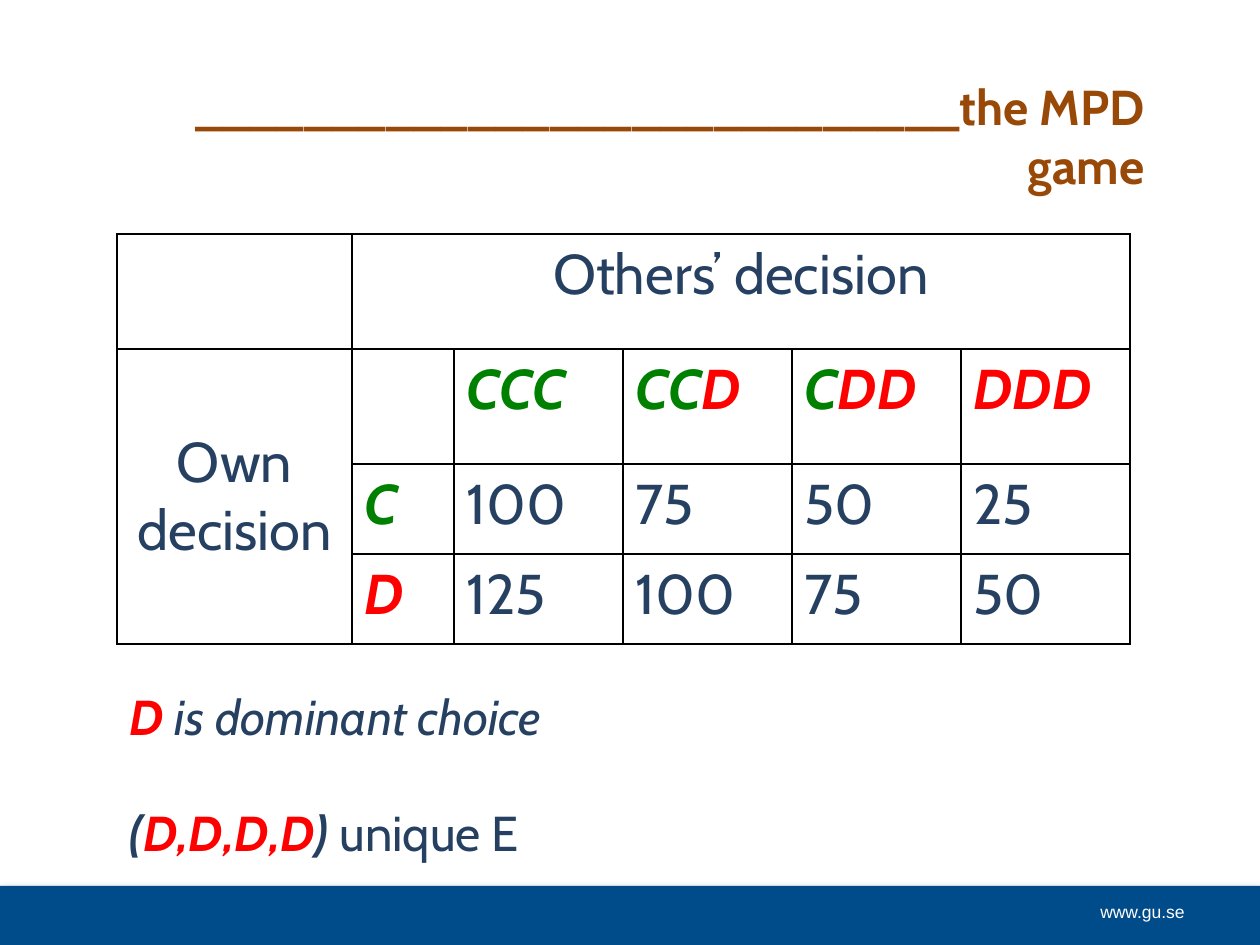
"""Build the slide with the payoff table of the MPD game."""
from itertools import groupby

from lxml.etree import SubElement
from pptx import Presentation
from pptx.dml.color import RGBColor
from pptx.enum.shapes import MSO_SHAPE
from pptx.enum.text import MSO_ANCHOR, MSO_AUTO_SIZE, PP_ALIGN
from pptx.oxml import parse_xml
from pptx.oxml.ns import nsdecls, qn
from pptx.util import Pt

PX = 914400 // 126
NAVY, RED, GREEN, BROWN = "254061", "FF0000", "008000", "984807"
BLUE, WHITE, BLACK = "004B89", "FFFFFF", "000000"
CHOICE_COLORS = {"C": GREEN, "D": RED}

TITLE = "_" * 28 + "the MPD game"
OTHERS_HEADING = "Others’ decision"
OWN_HEADING = "Own decision"
PAYOFFS = [
    ["", "CCC", "CCD", "CDD", "DDD"],
    ["C", "100", "75", "50", "25"],
    ["D", "125", "100", "75", "50"],
]
CONCLUSIONS = [
    [("D ", RED, True, True), ("is dominant choice", NAVY, False, True)],
    [("(", NAVY, True, True), ("D,D,D,D", RED, True, True),
     (")", NAVY, True, True), (" unique E", NAVY, False, False)],
]
ADDRESS = "www.gu.se"

COLUMN_WIDTHS = [235, 102] + [169] * 4
ROW_HEIGHTS = [115, 115, 90, 90]
TABLE_LEFT, TABLE_TOP = 117, 234


def box(*lengths):
    return [length * PX for length in lengths]


def rgb(color):
    return RGBColor.from_string(color)


def style(font, size, name="Cabin", color=None, bold=None):
    font.size, font.name = Pt(size), name
    if color:
        font.color.rgb = rgb(color)
    font.bold = bold


def add_runs(paragraph, runs, size):
    style(paragraph.font, size)
    for text, color, bold, italic in runs:
        run = paragraph.add_run()
        run.text = text
        run.font.color.rgb = rgb(color)
        run.font.bold, run.font.italic = bold, italic


def choice_runs(text):
    return [("".join(letters), CHOICE_COLORS.get(choice, NAVY),
             choice in CHOICE_COLORS, choice in CHOICE_COLORS)
            for choice, letters in groupby(text)]


def outline(cell):
    properties = cell._tc.get_or_add_tcPr()
    for side in ("lnL", "lnR", "lnT", "lnB"):
        line = SubElement(properties, qn(f"a:{side}"), w=str(Pt(1)))
        SubElement(SubElement(line, qn("a:solidFill")), qn("a:srgbClr"), val=BLACK)
    cell.fill.background()


def add_heading(cell, text):
    heading = cell.text_frame.paragraphs[0]
    heading.text = text
    heading.alignment = PP_ALIGN.CENTER
    style(heading.font, 32, color=NAVY)


def add_payoff_table(slide):
    table = slide.shapes.add_table(
        len(ROW_HEIGHTS), len(COLUMN_WIDTHS),
        *box(TABLE_LEFT, TABLE_TOP, sum(COLUMN_WIDTHS), sum(ROW_HEIGHTS))).table
    table.first_row = table.horz_banding = False
    for column, width in zip(table.columns, COLUMN_WIDTHS):
        column.width = width * PX
    for row, height in zip(table.rows, ROW_HEIGHTS):
        row.height = height * PX
    for cell in table.iter_cells():
        outline(cell)
    table.cell(0, 1).merge(table.cell(0, 5))
    table.cell(1, 0).merge(table.cell(3, 0))
    add_heading(table.cell(0, 1), OTHERS_HEADING)
    add_heading(table.cell(1, 0), OWN_HEADING)
    table.cell(1, 0).vertical_anchor = MSO_ANCHOR.MIDDLE
    for row, payoffs in enumerate(PAYOFFS, 1):
        for column, payoff in enumerate(payoffs, 1):
            if payoff:
                paragraph = table.cell(row, column).text_frame.paragraphs[0]
                runs = ([(payoff, NAVY, False, False)] if payoff.isdigit()
                        else choice_runs(payoff))
                add_runs(paragraph, runs, 32)


def add_footer(slide):
    band = slide.shapes.add_shape(MSO_SHAPE.RECTANGLE, *box(0, 886, 1260, 59))
    band.fill.solid()
    band.fill.fore_color.rgb = rgb(BLUE)
    band.line.fill.background()
    band._element.spPr.append(parse_xml(
        f'<a:effectLst {nsdecls("a")}><a:outerShdw blurRad="{Pt(5)}" dist="{Pt(1.8)}" '
        f'dir="5400000"><a:srgbClr val="{BLACK}"><a:alpha val="35000"/></a:srgbClr>'
        '</a:outerShdw></a:effectLst>'))
    address = slide.shapes.add_textbox(*box(1084, 895, 113, 34)).text_frame
    address.word_wrap = True
    paragraph = address.paragraphs[0]
    paragraph.text = ADDRESS
    paragraph.alignment = PP_ALIGN.RIGHT
    style(paragraph.font, 10, "Arial", WHITE)


def add_title(slide):
    title = slide.shapes.title
    title.left, title.top, title.width, title.height = box(83, 96, 1074, 79)
    frame = title.text_frame
    frame.auto_size, frame.vertical_anchor = MSO_AUTO_SIZE.NONE, MSO_ANCHOR.MIDDLE
    paragraph = frame.paragraphs[0]
    paragraph.text = TITLE
    paragraph.alignment = PP_ALIGN.RIGHT
    style(paragraph.font, 28, color=BROWN, bold=True)


def add_conclusions(slide):
    frame = slide.shapes.add_textbox(*box(117, 680, 1012, 190)).text_frame
    frame.word_wrap = True
    for index, runs in enumerate(CONCLUSIONS):
        paragraph = frame.add_paragraph() if index else frame.paragraphs[0]
        if index:
            paragraph.space_before = Pt(33)
        add_runs(paragraph, runs, 28)


def main():
    presentation = Presentation()
    presentation.slide_width, presentation.slide_height = box(1260, 945)
    slide = presentation.slides.add_slide(presentation.slide_layouts[5])
    add_footer(slide)
    add_title(slide)
    add_payoff_table(slide)
    add_conclusions(slide)
    presentation.save("out.pptx")


if __name__ == "__main__":
    main()
